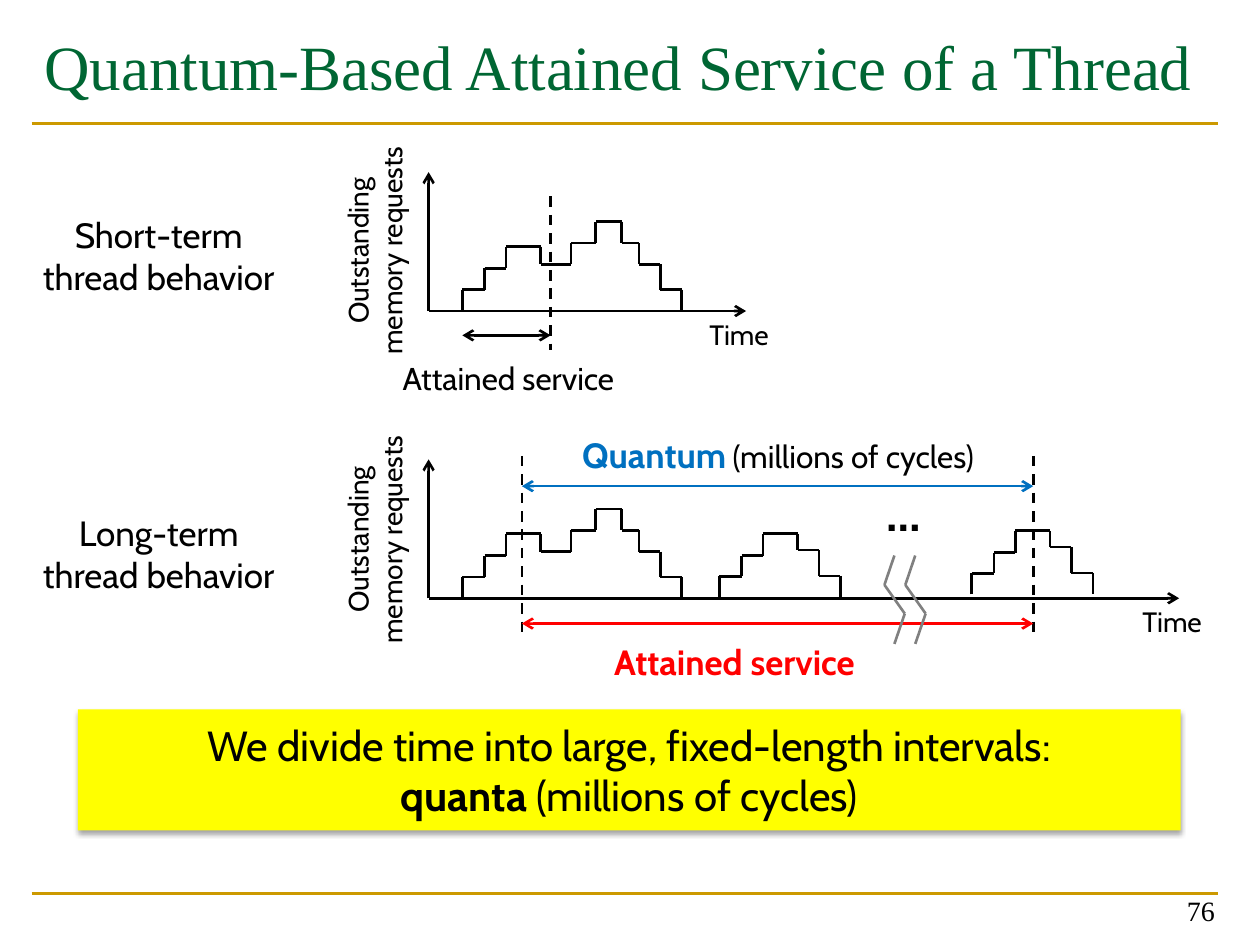
import itertools

import pptx
import pptx.dml.color
import pptx.enum.dml
import pptx.enum.text
import pptx.oxml
import pptx.oxml.ns
import pptx.util
from pptx.util import Cm

COLORS = {"black": "000000", "green": "006633", "gold": "CC9900", "gray": "808080",
          "blue": "0070C0", "red": "FF0000", "yellow": "FFFF00"}
BODY_FONT, TITLE_FONT = "Cabin", "Times New Roman"
ALIGN, ANCHOR = pptx.enum.text.PP_ALIGN, pptx.enum.text.MSO_ANCHOR

# All positions are in centimetres: (left, top, width, height) or (x, y).
TITLE = "Quantum-Based Attained Service of a Thread"
TITLE_BOX = (0.64, 0.43, 23.93, 2.97)
PAGE_NUMBER, PAGE_BOX = "76", (18.82, 17.55, 5.92, 1.27)
RULE_LEFT, RULE_RIGHT, RULE_TOPS = 0.64, 24.56, (18.01, 2.49)

AXIS_LEFT, AXIS_HEIGHT = 8.64, 2.8
CHARTS = [  # baseline, end of time axis, top of "Outstanding" label, behavior label and its top
    (6.27, 15.04, 4.24, "Short-term\nthread behavior", 4.17),
    (12.06, 23.77, 10.06, "Long-term\nthread behavior", 10.19),
]

# A burst is its step edges and the height between each pair of edges.
DOUBLE_BURST = ([9.32, 9.77, 10.2, 10.9, 11.51, 12.01, 12.53, 12.88, 13.31, 13.74],
                [0.43, 0.86, 1.3, 0.94, 1.37, 1.8, 1.37, 0.94, 0.43])
SINGLE_BURST = ([14.5, 14.95, 15.38, 16.08, 16.51, 16.94], [0.42, 0.84, 1.28, 0.95, 0.43])
BURSTS = [  # burst, shift to the right, baseline
    (DOUBLE_BURST, 0, 6.27), (DOUBLE_BURST, 0, 12.06),
    (SINGLE_BURST, 0, 12.04), (SINGLE_BURST, 5.09, 11.98),
]

SERVICE_END, QUANTUM_START, QUANTUM_END = 11.1, 10.52, 20.83
CUTS = [(SERVICE_END, 3.96, 7.06), (QUANTUM_START, 9.19, 12.78), (QUANTUM_END, 9.19, 12.78)]
SPANS = [(9.32, SERVICE_END, 6.76, "black"), (QUANTUM_START, QUANTUM_END, 12.57, "red"),
         (QUANTUM_START, QUANTUM_END, 9.8, "blue")]
AXIS_BREAK = [(18.03, 11.2), (17.83, 11.79), (18.24, 12.37), (18.03, 12.98)]
BREAK_GAP = 0.42

# Mixed text is a list of (text, size, color, bold).
QUANTUM = [("Quantum", 20, "blue", True), (" ", 16, "black", False),
           ("(millions of cycles)", 18, "black", False)]
LABELS = [  # text, box, size, color, bold
    ("Attained service", (7.39, 7.11, 5.72, 1.02), 18, "black", False),
    ("Attained service", (11.56, 12.78, 6.5, 1.12), 20, "red", True),
    ("…", (17.27, 9.6, 1.9, 1.45), 28, "black", True),
    (QUANTUM, (10.72, 8.61, 9.93, 1.12), 20, "black", False),
]
BANNER_BOX = (1.57, 14.3, 22.23, 2.44)
BANNER = ["We divide time into large, fixed-length intervals:",
          [("quanta ", 24, "black", True), ("(millions of cycles)", 24, "black", False)]]


def rgb(color):
    return pptx.dml.color.RGBColor.from_string(COLORS[color])


def set_font(font, size, color, bold=False, name=BODY_FONT):
    font.name, font.size, font.bold = name, pptx.util.Pt(size), bold
    font.color.rgb = rgb(color)


def fill_paragraph(paragraph, content, size, color, bold=False, name=BODY_FONT, align=ALIGN.CENTER):
    paragraph.alignment = align
    if isinstance(content, str):
        paragraph.text = content
        set_font(paragraph.font, size, color, bold, name)
        return
    for words, *style in content:
        run = paragraph.add_run()
        run.text = words
        set_font(run.font, *style)


def add_label(slide, content, box, *style, rotation=0, anchor=ANCHOR.TOP, **options):
    label = slide.shapes.add_textbox(*map(Cm, box))
    label.rotation = rotation
    label.text_frame.word_wrap = True
    label.text_frame.vertical_anchor = anchor
    fill_paragraph(label.text_frame.paragraphs[0], content, *style, **options)


def add_line(slide, start, end, color="black", arrows=(), dashed=False):
    """Draw a straight line; arrows names its arrow ends, "headEnd" before "tailEnd"."""
    line = slide.shapes.add_connector(pptx.enum.shapes.MSO_CONNECTOR.STRAIGHT,
                                      *map(Cm, start + end))
    line.line.color.rgb = rgb(color)
    line.line.width = pptx.util.Pt(1.5)
    if dashed:
        line.line.dash_style = pptx.enum.dml.MSO_LINE.DASH
    for arrow in arrows:
        tip = pptx.oxml.parse_xml(f'<a:{arrow} {pptx.oxml.ns.nsdecls("a")} type="arrow"/>')
        line.get_or_add_ln().append(tip)
    no_shadow = pptx.oxml.parse_xml(f'<a:effectLst {pptx.oxml.ns.nsdecls("a")}/>')
    line._element.spPr.append(no_shadow)


def add_path(slide, points, color="black"):
    for start, end in itertools.pairwise(points):
        add_line(slide, start, end, color)


def burst_points(edges, heights, shift, baseline):
    """Return the corners of a staircase that starts and ends on the baseline."""
    levels = [0, *heights, 0]
    return [(edge + shift, baseline - level)
            for edge, sides in zip(edges, itertools.pairwise(levels)) for level in sides]


def add_banner(slide):
    banner = slide.shapes.add_shape(pptx.enum.shapes.MSO_SHAPE.RECTANGLE, *map(Cm, BANNER_BOX))
    banner.fill.solid()
    banner.fill.fore_color.rgb = rgb("yellow")
    banner.line.fill.background()
    banner.shadow.inherit = False
    shadow = pptx.oxml.parse_xml(
        f'<a:outerShdw {pptx.oxml.ns.nsdecls("a")} blurRad="{pptx.util.Pt(3.1)}" '
        f'dist="{pptx.util.Pt(1.8)}" dir="5400000" rotWithShape="0">'
        f'<a:srgbClr val="{COLORS["black"]}"><a:alpha val="35000"/></a:srgbClr></a:outerShdw>')
    banner._element.spPr.find(pptx.oxml.ns.qn("a:effectLst")).append(shadow)
    frame = banner.text_frame
    frame.word_wrap = True
    frame.vertical_anchor = ANCHOR.MIDDLE
    for number, content in enumerate(BANNER):
        paragraph = frame.add_paragraph() if number else frame.paragraphs[0]
        fill_paragraph(paragraph, content, 24, "black")


def add_title(slide):
    title = slide.shapes.title
    title.left, title.top, title.width, title.height = map(Cm, TITLE_BOX)
    title.text_frame.vertical_anchor = ANCHOR.TOP
    title.text_frame.auto_size = pptx.enum.text.MSO_AUTO_SIZE.NONE
    fill_paragraph(title.text_frame.paragraphs[0], TITLE, 36, "green",
                   name=TITLE_FONT, align=ALIGN.LEFT)


def main():
    deck = pptx.Presentation()
    deck.slide_width, deck.slide_height = Cm(25.4), Cm(19.05)
    slide = deck.slides.add_slide(deck.slide_layouts.get_by_name("Title Only"))

    for top in RULE_TOPS:
        add_line(slide, (RULE_LEFT, top), (RULE_RIGHT, top), "gold")
    add_title(slide)
    add_label(slide, PAGE_NUMBER, PAGE_BOX, 16, "black", anchor=ANCHOR.BOTTOM,
              name=TITLE_FONT, align=ALIGN.RIGHT)

    for baseline, axis_end, requests_top, behavior, behavior_top in CHARTS:
        origin = (AXIS_LEFT, baseline)
        add_line(slide, origin, (AXIS_LEFT, baseline - AXIS_HEIGHT), arrows=["tailEnd"])
        add_line(slide, origin, (axis_end, baseline), arrows=["tailEnd"])
        add_label(slide, "Time", (axis_end - 1.09, baseline, 1.9, 0.94), 16, "black")
        add_label(slide, "Outstanding memory requests", (4.88, requests_top, 5.36, 1.63),
                  16, "black", rotation=270)
        add_label(slide, behavior, (0.43, behavior_top, 5.54, 1.96), 20, "black")

    for (edges, heights), shift, baseline in BURSTS:
        add_path(slide, burst_points(edges, heights, shift, baseline))
    for x, top, bottom in CUTS:
        add_line(slide, (x, top), (x, bottom), dashed=True)
    for left, right, y, color in SPANS:
        add_line(slide, (left, y), (right, y), color, arrows=["headEnd", "tailEnd"])
    for shift in (0, BREAK_GAP):
        add_path(slide, [(x + shift, y) for x, y in AXIS_BREAK], "gray")
    for content, box, *style in LABELS:
        add_label(slide, content, box, *style)
    add_banner(slide)
    deck.save("out.pptx")


if __name__ == "__main__":
    main()
